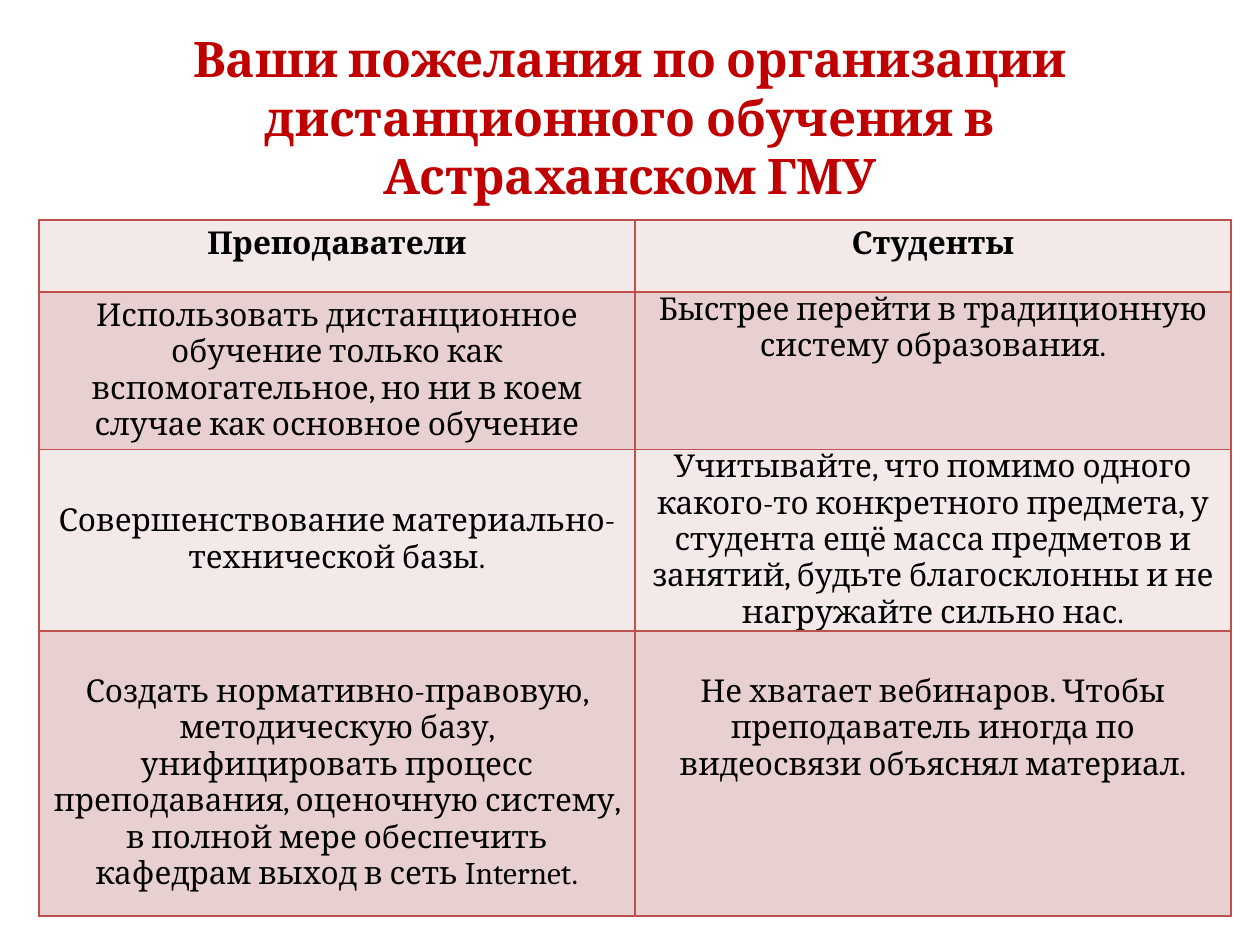
from dataclasses import dataclass

import pptx
import pptx.dml.color
import pptx.enum.text
import pptx.oxml
import pptx.oxml.ns
import pptx.util

PIXELS_PER_INCH = 126


@dataclass(frozen=True)
class Theme:
    font: str = "Cambria"
    title_size: int = 28
    cell_size: int = 18
    title_color: str = "C00000"
    text_color: str = "000000"
    border_color: str = "C0504D"
    border_width: int = 1
    row_fills: tuple[str, str] = ("F4E9E9", "E8D0D0")


@dataclass(frozen=True)
class Insets:
    side: int = 13
    top: int = 6
    bottom: int = 6


@dataclass(frozen=True)
class Wish:
    text: str
    insets: Insets = Insets()
    bold: bool = False


@dataclass(frozen=True)
class WishRow:
    height: int
    teachers: Wish
    students: Wish


THEME = Theme()
TIGHT = Insets(side=15, top=0, bottom=0)
TIGHT_LOWERED = Insets(side=15, top=54, bottom=0)
LOWERED = Insets(top=43)

TITLE = "Ваши пожелания по организации дистанционного обучения в Астраханском ГМУ"
ROWS = [
    WishRow(72, Wish("Преподаватели", bold=True), Wish("Студенты", bold=True)),
    WishRow(
        142,
        Wish("Использовать дистанционное обучение только как вспомогательное, "
             "но ни в коем случае как основное обучение"),
        Wish("Быстрее перейти в традиционную систему образования.", TIGHT),
    ),
    WishRow(
        166,
        Wish("Совершенствование материально-технической базы.", TIGHT_LOWERED),
        Wish("Учитывайте, что помимо одного какого-то конкретного предмета, "
             "у студента ещё масса предметов и занятий, будьте благосклонны "
             "и не нагружайте сильно нас.", TIGHT),
    ),
    WishRow(
        285,
        Wish("Создать нормативно-правовую, методическую базу, унифицировать "
             "процесс преподавания, оценочную систему, в полной мере обеспечить "
             "кафедрам выход в сеть Internet.", LOWERED),
        Wish("Не хватает вебинаров. Чтобы преподаватель иногда по видеосвязи "
             "объяснял материал.", LOWERED),
    ),
]


def px(value: int) -> int:
    return pptx.util.Emu(value * pptx.util.Inches(1) // PIXELS_PER_INCH)


def set_text(text_frame, text: str, size: int, color: str, bold: bool) -> None:
    text_frame.text = text
    paragraph = text_frame.paragraphs[0]
    paragraph.alignment = pptx.enum.text.PP_ALIGN.CENTER
    font = paragraph.runs[0].font
    font.name = THEME.font
    font.size = pptx.util.Pt(size)
    font.bold = bold
    font.color.rgb = pptx.dml.color.RGBColor.from_string(color)


def add_borders(cell) -> None:
    properties = cell._tc.get_or_add_tcPr()
    namespace = pptx.oxml.ns.nsdecls("a")
    width = pptx.util.Pt(THEME.border_width)
    for side in ("lnL", "lnR", "lnT", "lnB"):
        properties.append(pptx.oxml.parse_xml(
            f'<a:{side} {namespace} w="{width}"><a:solidFill>'
            f'<a:srgbClr val="{THEME.border_color}"/></a:solidFill></a:{side}>'
        ))


def fill_cell(cell, wish: Wish, fill: str) -> None:
    add_borders(cell)
    cell.fill.solid()
    cell.fill.fore_color.rgb = pptx.dml.color.RGBColor.from_string(fill)
    cell.margin_left = cell.margin_right = px(wish.insets.side)
    cell.margin_top = px(wish.insets.top)
    cell.margin_bottom = px(wish.insets.bottom)
    set_text(cell.text_frame, wish.text, THEME.cell_size, THEME.text_color, wish.bold)


def place_title(slide) -> None:
    title = slide.shapes.title
    title.left, title.top, title.width, title.height = map(px, (63, 38, 1134, 157))
    text_frame = title.text_frame
    text_frame.word_wrap = True
    text_frame.auto_size = pptx.enum.text.MSO_AUTO_SIZE.NONE
    text_frame.vertical_anchor = pptx.enum.text.MSO_ANCHOR.MIDDLE
    set_text(text_frame, TITLE, THEME.title_size, THEME.title_color, bold=True)


def add_wishes_table(slide) -> None:
    height = sum(row.height for row in ROWS)
    frame = slide.shapes.add_table(len(ROWS), 2, px(39), px(220), px(1192), px(height))
    table = frame.table
    for index, row in enumerate(ROWS):
        table.rows[index].height = px(row.height)
        fill = THEME.row_fills[index % 2]
        for column, wish in enumerate((row.teachers, row.students)):
            fill_cell(table.cell(index, column), wish, fill)


def main() -> None:
    presentation = pptx.Presentation()
    presentation.slide_width = px(1260)
    presentation.slide_height = px(945)
    slide = presentation.slides.add_slide(presentation.slide_layouts.get_by_name("Title Only"))
    place_title(slide)
    add_wishes_table(slide)
    presentation.save("out.pptx")


if __name__ == "__main__":
    main()
